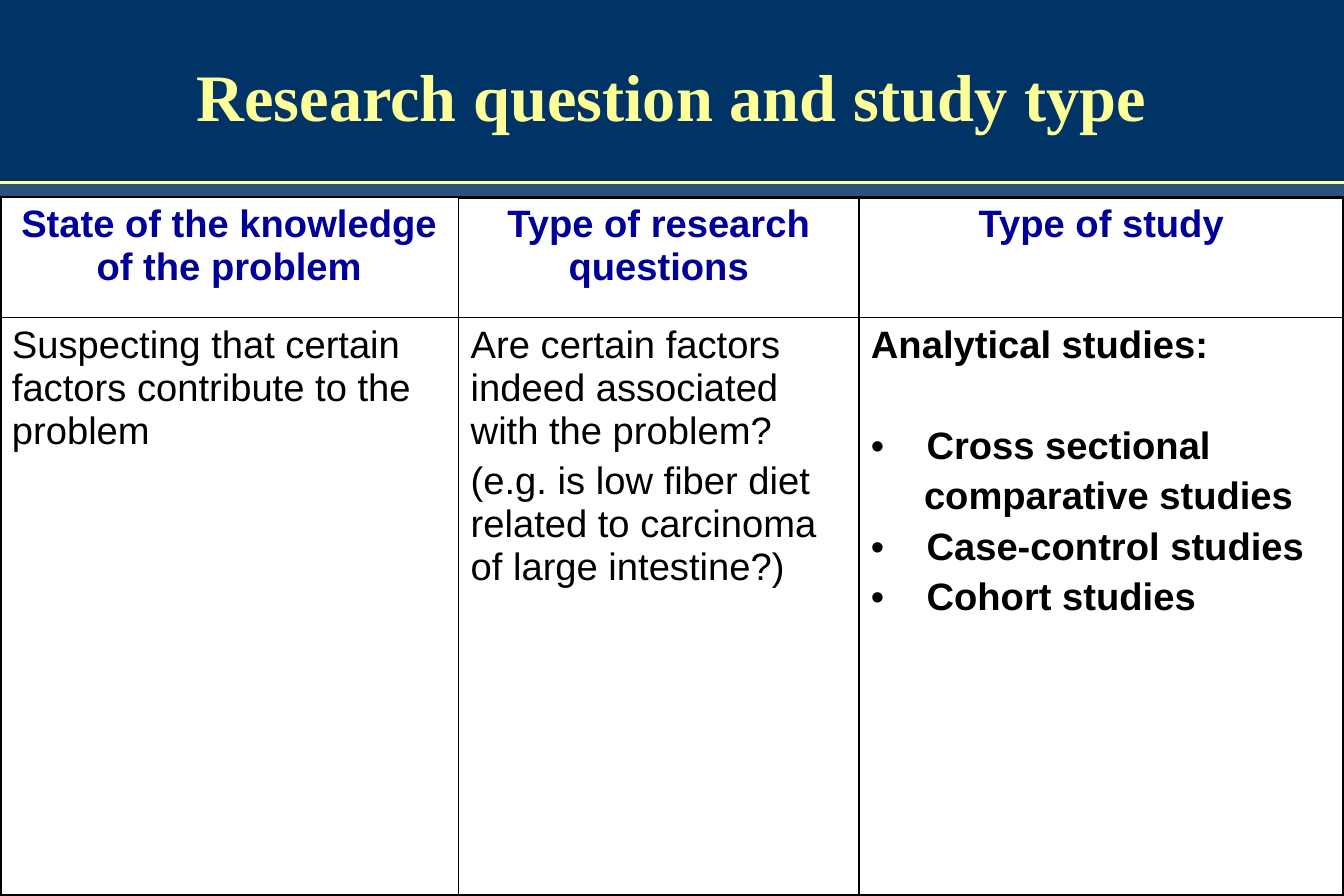
from dataclasses import dataclass
from lxml.etree import SubElement
from pptx import Presentation
from pptx.dml.color import RGBColor
from pptx.enum.shapes import MSO_CONNECTOR, MSO_SHAPE
from pptx.enum.text import MSO_ANCHOR, MSO_AUTO_SIZE, PP_ALIGN
from pptx.oxml.ns import qn
from pptx.util import Pt


@dataclass(frozen=True)
class Theme:
    """Colours, fonts and sizes of the slide."""
    page: str = "29537D"
    band: str = "003366"
    accent: str = "FFFF99"
    head: str = "000099"
    ink: str = "000000"
    paper: str = "FFFFFF"
    serif: str = "Times New Roman"
    sans: str = "Arial"
    title_size: float = 40
    body_size: float = 23
    gap: float = 4.6
    thin: float = 1
    thick: float = 2.25


T = Theme()
WIDTH, HEIGHT = 810, 540
BAND_H, TABLE_TOP = 110.2, 118.8
COLS, ROWS = (276.5, 241.2, 292.3), (72.7, 348.5)
HEADS = ("State of the knowledge of the problem", "Type of research questions", "Type of study")
PLAIN = {}
BOLD = {"bold": True}
BULLET = {"bold": True, "bullet": True, "left": 33.5}
BODIES = (
    [("Suspecting that certain factors contribute to the problem", PLAIN)],
    [("Are certain factors indeed associated with the problem?", PLAIN),
     ("(e.g. is low fiber diet related to carcinoma of large intestine?)", PLAIN)],
    [("Analytical studies:", BOLD),
     ("Cross sectional", {**BULLET, "before": 35}),
     ("comparative studies", {"bold": True, "left": 32}),
     ("Case-control studies", BULLET),
     ("Cohort studies", BULLET)],
)


def apply(obj, values):
    """Set each named attribute of an object."""
    for name, value in values.items():
        setattr(obj, name, value)


def paint(fill, color):
    """Make a fill solid in one colour."""
    fill.solid()
    fill.fore_color.rgb = RGBColor.from_string(color)


def add_text(p, text, font, size, color, bold):
    """Add one formatted run to a paragraph."""
    r = p.add_run()
    r.text = text
    apply(r.font, {"name": font, "size": Pt(size), "bold": bold})
    r.font.color.rgb = RGBColor.from_string(color)


def set_indent(p, left, bullet):
    """Indent a paragraph and hang its bullet when it has one."""
    pPr = p._p.get_or_add_pPr()
    pPr.set("marL", str(Pt(left)))
    pPr.set("indent", str(-Pt(left) if bullet else 0))
    if bullet:
        SubElement(pPr, qn("a:buFont"), typeface=T.sans)
        SubElement(pPr, qn("a:buChar"), char="•")


def set_borders(cell, widths):
    """Draw the cell borders, given widths by side."""
    tcPr = cell._tc.get_or_add_tcPr()
    for side, width in widths.items():
        ln = SubElement(tcPr, qn(f"a:ln{side}"), w=str(Pt(width)))
        SubElement(SubElement(ln, qn("a:solidFill")), qn("a:srgbClr"), val=T.ink)


def fill_cell(cell, paras, align, color):
    """Write the paragraphs of one table cell."""
    tf = cell.text_frame
    for i, (text, style) in enumerate(paras):
        p = tf.paragraphs[0] if i == 0 else tf.add_paragraph()
        before = style.get("before", T.gap if i else 0)
        apply(p, {"alignment": align, "space_before": Pt(before)})
        if "left" in style:
            set_indent(p, style["left"], style.get("bullet", False))
        add_text(p, text, T.sans, T.body_size, color, style.get("bold", False))


def add_header(s, x, y, w, h):
    """Place the title band, its rule and the title."""
    band = s.shapes.add_shape(MSO_SHAPE.RECTANGLE, Pt(x), Pt(y), Pt(w), Pt(h))
    band.shadow.inherit = False
    paint(band.fill, T.band)
    band.line.fill.background()
    rule = s.shapes.add_connector(MSO_CONNECTOR.STRAIGHT, Pt(x), Pt(y + h), Pt(x + w), Pt(y + h))
    rule.line.width = Pt(2)
    rule.line.color.rgb = RGBColor.from_string(T.accent)
    SubElement(rule._element.spPr, qn("a:effectLst"))

    title = s.shapes.title
    s.shapes.element.append(title.element)
    apply(title, {"left": Pt(x + 60.5), "top": Pt(y + 12.2),
                  "width": Pt(688.3), "height": Pt(h - 12.2)})
    tf = title.text_frame
    apply(tf, {"word_wrap": True, "auto_size": MSO_AUTO_SIZE.NONE,
               "vertical_anchor": MSO_ANCHOR.MIDDLE})
    p = tf.paragraphs[0]
    apply(p, {"alignment": PP_ALIGN.CENTER, "line_spacing": 0.85})
    add_text(p, "Research question and study type", T.serif, T.title_size, T.accent, True)


def add_study_table(s, x, y, w, h):
    """Place the table of knowledge, questions and study types."""
    table = s.shapes.add_table(len(ROWS), len(COLS), Pt(x), Pt(y), Pt(w), Pt(h)).table
    apply(table, {"first_row": False, "horz_banding": False})
    for col, width in zip(table.columns, COLS):
        col.width = Pt(width)
    for row, height in zip(table.rows, ROWS):
        row.height = Pt(height)
    last = len(COLS) - 1
    for c, (head, body) in enumerate(zip(HEADS, BODIES)):
        fill_cell(table.cell(0, c), [(head, BOLD)], PP_ALIGN.CENTER, T.head)
        fill_cell(table.cell(1, c), body, PP_ALIGN.LEFT, T.ink)
        for r in range(len(ROWS)):
            cell = table.cell(r, c)
            thick = {"L": c == 0, "R": c == last, "T": r == 0 and c > 0, "B": r == 1}
            set_borders(cell, {k: T.thick if v else T.thin for k, v in thick.items()})
            paint(cell.fill, T.paper)


def main():
    """Build and save the slide."""
    prs = Presentation()
    apply(prs, {"slide_width": Pt(WIDTH), "slide_height": Pt(HEIGHT)})
    s = prs.slides.add_slide(prs.slide_layouts[5])
    paint(s.background.fill, T.page)
    add_header(s, 0, 0, WIDTH, BAND_H)
    add_study_table(s, 0, TABLE_TOP, WIDTH, HEIGHT - TABLE_TOP)
    prs.save("out.pptx")


if __name__ == "__main__":
    main()
